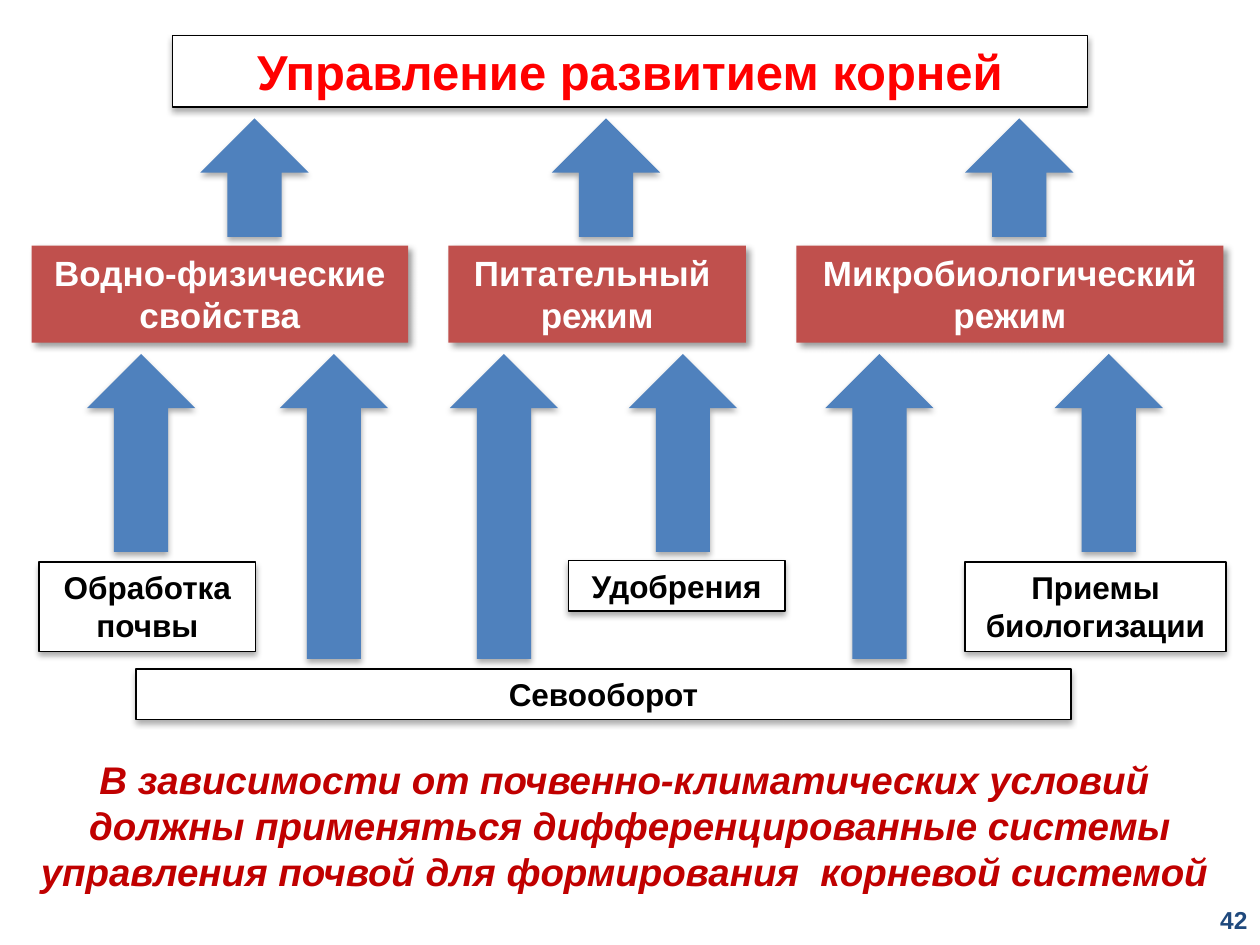
from dataclasses import dataclass
from typing import NamedTuple

from lxml.etree import SubElement
from pptx import Presentation
from pptx.dml.color import RGBColor as Rgb
from pptx.enum.shapes import MSO_SHAPE as Preset
from pptx.enum.text import MSO_ANCHOR as Anchor, MSO_AUTO_SIZE as AutoSize, PP_ALIGN as Align
from pptx.oxml.ns import qn
from pptx.util import Inches, Pt


class Shadow(NamedTuple):
    opacity: int
    blur: float
    distance: float
    angle: int


class TextStyle(NamedTuple):
    size: int
    color: str
    italic: bool = False
    align: Align = Align.CENTER


@dataclass(frozen=True)
class Theme:
    font: str = "Arial"
    paper: str = "FFFFFF"
    outline: str = "000000"
    arrow: str = "4F81BD"
    regime: str = "C0504D"
    soft: Shadow = Shadow(32, 3.5, 2.2, 90)
    strong: Shadow = Shadow(40, 4, 3, 45)
    title: TextStyle = TextStyle(28, "FF0000")
    regime_text: TextStyle = TextStyle(20, "FFFFFF")
    practice_text: TextStyle = TextStyle(18, "000000")
    conclusion: TextStyle = TextStyle(22, "C00000", italic=True)
    number: TextStyle = TextStyle(14, "1F497D", align=Align.RIGHT)


class Box(NamedTuple):
    text: str
    left: float
    top: float
    width: float
    height: float


class ArrowRow(NamedTuple):
    top: float
    height: float
    lefts: tuple[float, ...]


THEME = Theme()
ARROW_WIDTH = 0.86

TITLE = Box("Управление развитием корней", 1.37, 0.28, 7.26, 0.57)
REGIMES = [
    Box("Водно-физические свойства", 0.25, 1.95, 2.99, 0.77),
    Box("Питательный \nрежим", 3.56, 1.95, 2.36, 0.77),
    Box("Микробиологический режим", 6.32, 1.95, 3.39, 0.77),
]
PRACTICES = [
    Box("Обработка почвы", 0.31, 4.46, 1.72, 0.71),
    Box("Удобрения", 4.51, 4.45, 1.72, 0.4),
    Box("Приемы биологизации", 7.66, 4.46, 2.07, 0.71),
    Box("Севооборот", 1.08, 5.31, 7.42, 0.4),
]
ARROW_ROWS = [
    ArrowRow(0.94, 0.94, (1.59, 4.38, 7.66)),  # regimes to title
    ArrowRow(2.81, 1.57, (0.69, 4.99, 8.37)),  # practices to regimes
    ArrowRow(2.81, 2.42, (2.22, 3.57, 6.55)),  # crop rotation to regimes
]
CONCLUSION = Box(
    "В зависимости от почвенно-климатических условий \n"
    "должны применяться дифференцированные системы "
    "управления почвой для формирования  корневой системой ",
    0, 5.95, 10, 1.21,
)
NUMBER = Box("42", 7.67, 7.1, 2.33, 0.4)


def place(shape, box: Box) -> None:
    shape.left, shape.top = Inches(box.left), Inches(box.top)
    shape.width, shape.height = Inches(box.width), Inches(box.height)


def paint(shape, fill: str, shadow: Shadow, outlined: bool = False) -> None:
    shape.fill.solid()
    shape.fill.fore_color.rgb = Rgb.from_string(fill)
    if outlined:
        shape.line.color.rgb = Rgb.from_string(THEME.outline)
        shape.line.width = Pt(0.75)
    else:
        shape.line.fill.background()
    shape.shadow.inherit = False
    effects = shape._element.spPr.find(qn("a:effectLst"))
    outer = SubElement(
        effects, qn("a:outerShdw"),
        blurRad=str(Pt(shadow.blur)), dist=str(Pt(shadow.distance)),
        dir=str(shadow.angle * 60000), algn="ctr", rotWithShape="0",
    )
    color = SubElement(outer, qn("a:srgbClr"), val="000000")
    SubElement(color, qn("a:alpha"), val=str(shadow.opacity * 1000))


def write(shape, text: str, style: TextStyle, anchor: Anchor = Anchor.TOP) -> None:
    frame = shape.text_frame
    frame.text = text
    frame.word_wrap = True
    frame.auto_size = AutoSize.NONE
    frame.vertical_anchor = anchor
    for para in frame.paragraphs:
        para.alignment = style.align
        para.space_before = Pt(0)
        for span in para.runs:
            span.font.name = THEME.font
            span.font.size = Pt(style.size)
            span.font.bold = True
            span.font.italic = style.italic
            span.font.color.rgb = Rgb.from_string(style.color)


def add_preset(page, preset: Preset, box: Box):
    shape = page.shapes.add_shape(preset, 0, 0, 0, 0)
    place(shape, box)
    return shape


def add_label(page, box: Box, style: TextStyle, anchor: Anchor = Anchor.TOP) -> None:
    label = page.shapes.add_textbox(0, 0, 0, 0)
    place(label, box)
    # A manual break stays inside one paragraph
    write(label, box.text.replace("\n", "\v"), style, anchor)


def main() -> None:
    deck = Presentation()
    deck.slide_width, deck.slide_height = Inches(10), Inches(7.5)
    page = deck.slides.add_slide(deck.slide_layouts.get_by_name("Title Only"))

    # Conclusion under the diagram
    add_label(page, CONCLUSION, THEME.conclusion)

    # Framed title
    title = page.shapes.title
    place(title, TITLE)
    paint(title, THEME.paper, THEME.soft, outlined=True)
    write(title, TITLE.text, THEME.title)

    # Soil regimes
    for box in REGIMES:
        shape = add_preset(page, Preset.RECTANGLE, box)
        paint(shape, THEME.regime, THEME.strong)
        write(shape, box.text, THEME.regime_text)

    # Farming practices
    for box in PRACTICES:
        shape = add_preset(page, Preset.RECTANGLE, box)
        paint(shape, THEME.paper, THEME.soft, outlined=True)
        write(shape, box.text, THEME.practice_text)

    # Upward arrows
    for row in ARROW_ROWS:
        for left in row.lefts:
            box = Box("", left, row.top, ARROW_WIDTH, row.height)
            paint(add_preset(page, Preset.UP_ARROW, box), THEME.arrow, THEME.soft)

    # Page number
    add_label(page, NUMBER, THEME.number, Anchor.MIDDLE)

    deck.save("out.pptx")


if __name__ == "__main__":
    main()
